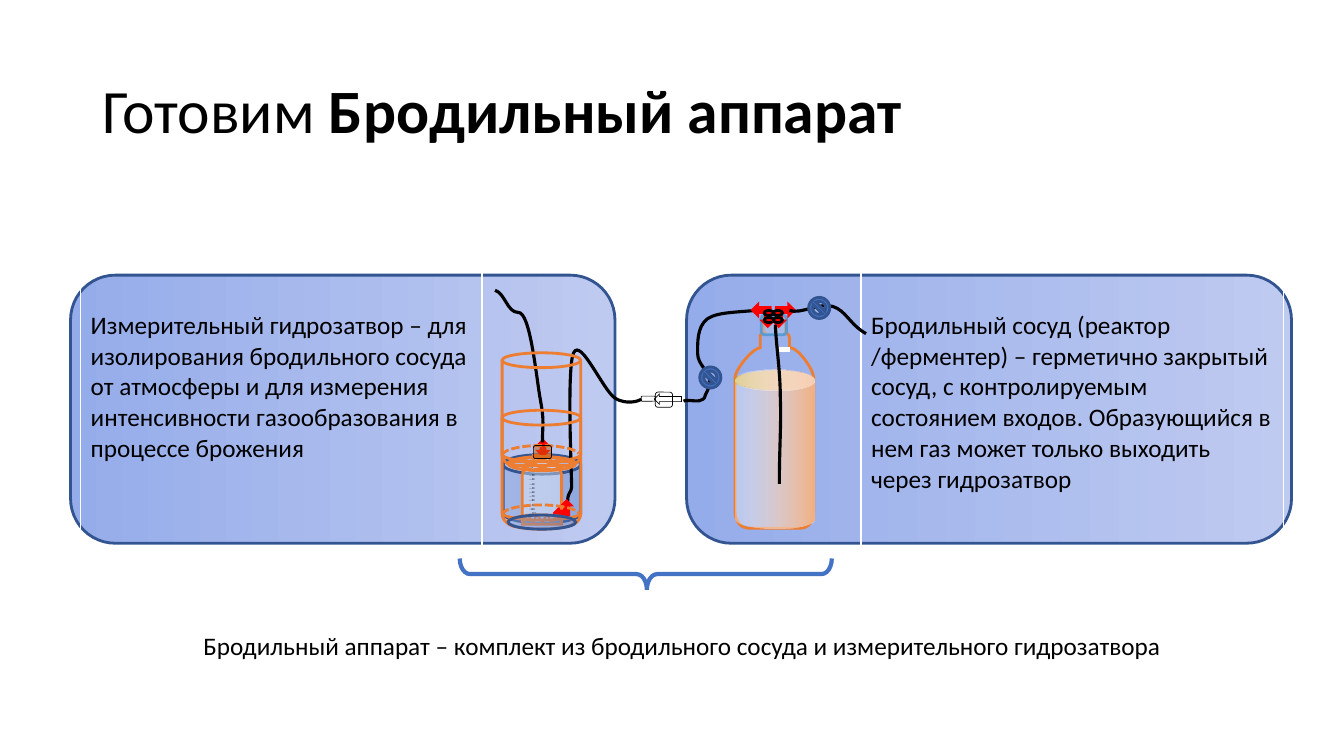
from dataclasses import dataclass

from lxml.etree import SubElement
from pptx import Presentation
from pptx.dml.color import RGBColor
from pptx.enum.dml import MSO_LINE
from pptx.enum.shapes import MSO_CONNECTOR, MSO_SHAPE
from pptx.enum.text import MSO_ANCHOR, PP_ALIGN
from pptx.oxml.ns import qn
from pptx.util import Inches, Pt


@dataclass(frozen=True)
class Theme:
    font: str = "Calibri"
    title: float = 44
    body: float = 18
    scale: float = 2
    fine: float = 1
    black: str = "000000"
    white: str = "FFFFFF"
    red: str = "FF0000"
    orange: str = "ED7D31"
    blue: str = "4472C4"
    navy: str = "325490"
    sky: str = "5B9BD5"
    surface: str = "BF9000"
    neck: tuple = (("B4C7E7", 51),)
    float_cap: tuple = (("C55A11", 51),)
    cup: tuple = (("FFFFFF", 37),)
    panel: tuple = (("95ACEA", 100), ("BFCAF0", 100))
    must: tuple = (("F6F8FC", 36), ("F4B183", 100))
    water: tuple = (("4A76C6", 40), ("84A2D9", 40))


T = Theme()


def set_alpha(color_parent, percent):
    if percent < 100:
        clr = color_parent.find(".//" + qn("a:srgbClr"))
        SubElement(clr, qn("a:alpha")).set("val", str(percent * 1000))


def draw_line(shape, color, width):
    shape.line.color.rgb = RGBColor.from_string(color)
    shape.line.width = Pt(width)
    ln = shape._element.spPr.find(qn("a:ln"))
    SubElement(ln, qn("a:miter")).set("lim", "800000")


def paint(sp, fill, line, width, angle=0):
    sp.shadow.inherit = False
    if fill is None:
        sp.fill.background()
    elif isinstance(fill, str):
        sp.fill.solid()
        sp.fill.fore_color.rgb = RGBColor.from_string(fill)
    elif len(fill) == 1:
        sp.fill.solid()
        sp.fill.fore_color.rgb = RGBColor.from_string(fill[0][0])
        set_alpha(sp._element.spPr.find(qn("a:solidFill")), fill[0][1])
    else:
        sp.fill.gradient()
        sp.fill.gradient_angle = angle
        stops = sp._element.spPr.findall(".//" + qn("a:gs"))
        for i, (stop, gs, (color, alpha)) in enumerate(zip(sp.fill.gradient_stops, stops, fill)):
            stop.color.rgb = RGBColor.from_string(color)
            stop.position = i
            set_alpha(gs, alpha)
    if line is None:
        sp.line.fill.background()
    else:
        draw_line(sp, line, width)


def add_preset(shapes, kind, box, fill=None, line=None, width=2, adj=(), rot=0, flip="", angle=0):
    sp = shapes.add_shape(kind, *map(Inches, box))
    for i, value in enumerate(adj):
        sp.adjustments[i] = value
    sp.rotation = rot
    xfrm = sp._element.spPr.find(qn("a:xfrm"))
    for axis in flip:
        xfrm.set("flip" + axis.upper(), "1")
    paint(sp, fill, line, width, angle)
    return sp


def add_line(shapes, start, end, color, width):
    cn = shapes.add_connector(MSO_CONNECTOR.STRAIGHT, *map(Inches, start + end))
    draw_line(cn, color, width)
    SubElement(cn._element.spPr, qn("a:effectLst"))


def add_outline(shapes, segments, line=T.black, width=2.25, fill=None, close=False):
    points = [seg[i:i + 2] for seg in segments for i in range(0, len(seg), 2)]
    emu = [(Inches(x), Inches(y)) for x, y in points]
    builder = shapes.build_freeform(*emu[0], scale=1.0)
    builder.add_line_segments(emu[1:], close=close)
    sp = builder.convert_to_shape()
    steps = iter(sp._element.spPr.findall(".//" + qn("a:lnTo")))
    for seg in segments[1:]:
        step = next(steps)
        if len(seg) == 6:
            bezier = step.makeelement(qn("a:cubicBezTo"), {})
            step.addprevious(bezier)
            for part in (step, next(steps), next(steps)):
                bezier.append(part[0])
                part.getparent().remove(part)
    paint(sp, fill, line, width)


def set_font(font, size, color=T.black):
    font.name = T.font
    font.size = Pt(size)
    font.color.rgb = RGBColor.from_string(color)


def add_title(slide):
    sp = slide.shapes.title
    sp.left, sp.top, sp.width, sp.height = map(Inches, (0.92, 0.4, 11.5, 1.45))
    tf = sp.text_frame
    tf.vertical_anchor = MSO_ANCHOR.MIDDLE
    p = tf.paragraphs[0]
    p.alignment = PP_ALIGN.LEFT
    p.line_spacing = 0.9
    set_font(p.font, T.title)
    p.add_run().text = "Готовим "
    r = p.add_run()
    r.text = "Бродильный аппарат"
    r.font.bold = True


def border_cell(cell):
    tc_pr = cell._tc.get_or_add_tcPr()
    for i, side in enumerate(("lnL", "lnR", "lnT", "lnB")):
        ln = tc_pr.makeelement(qn("a:" + side), {"w": str(Pt(0.96))})
        fill = SubElement(ln, qn("a:solidFill"))
        SubElement(fill, qn("a:srgbClr")).set("val", T.white)
        tc_pr.insert(i, ln)


def add_text_table(slide):
    table = slide.shapes.add_table(3, 3, *map(Inches, (0.8, 1.97, 11.93, 5.22))).table
    table.first_row = table.horz_banding = False
    for col, width in zip(table.columns, (3.98, 3.76, 4.19)):
        col.width = Inches(width)
    for row, height in zip(table.rows, (0.5, 3.48, 1.24)):
        row.height = Inches(height)
    for cell in table.iter_cells():
        cell.fill.background()
        border_cell(cell)
    for row in (0, 2):
        table.cell(row, 0).merge(table.cell(row, 2))
    entries = (
        (1, 0, 0.61, PP_ALIGN.LEFT, "Измерительный гидрозатвор – для изолирования бродильного сосуда от атмосферы и для измерения интенсивности газообразования в процессе брожения"),
        (1, 2, 0.61, PP_ALIGN.LEFT, "Бродильный сосуд (реактор /ферментер) – герметично закрытый сосуд, с контролируемым состоянием входов. Образующийся в нем газ может только выходить через гидрозатвор"),
        (2, 0, 0.31, PP_ALIGN.CENTER, "Бродильный аппарат – комплект из бродильного сосуда и измерительного гидрозатвора"),
    )
    for row, col, margin, align, text in entries:
        cell = table.cell(row, col)
        cell.margin_top = Inches(margin)
        p = cell.text_frame.paragraphs[0]
        p.text = text
        p.alignment = align
        set_font(p.font, T.body)


def add_vessel(shapes):
    add_outline(shapes, [(7.58, 3.07), (7.34, 3.1, 7.13, 3.09, 7.02, 3.16), (6.91, 3.24, 6.92, 3.41, 6.92, 3.51), (6.92, 3.61, 7.03, 3.69, 7.04, 3.75), (7.05, 3.82, 7.02, 3.87, 7, 3.91), (6.99, 3.94, 6.99, 3.96, 6.95, 3.97), (6.92, 3.99, 6.81, 3.96, 6.78, 3.98)])
    add_preset(shapes, MSO_SHAPE.NO_SYMBOL, (6.94, 3.64, 0.21, 0.21), T.blue, T.navy, adj=[0.188])
    add_outline(shapes, [(7.6, 3.13), (7.76, 3.13), (7.78, 3.13, 7.79, 3.14, 7.79, 3.16), (7.79, 3.28), (7.79, 3.29, 7.79, 3.3, 7.79, 3.3), (7.78, 3.3), (7.81, 3.31), (7.82, 3.32, 7.83, 3.33, 7.83, 3.35), (7.83, 3.45), (7.84, 3.45), (7.91, 3.45, 8.07, 3.66, 8.07, 3.75), (8.07, 5.08), (8.07, 5.17, 8.02, 5.24, 7.94, 5.24), (7.42, 5.24), (7.35, 5.24, 7.29, 5.17, 7.29, 5.08), (7.29, 3.75), (7.29, 3.67, 7.43, 3.5, 7.51, 3.46), (7.54, 3.45), (7.54, 3.35), (7.54, 3.33, 7.54, 3.32, 7.55, 3.31), (7.58, 3.3), (7.58, 3.3), (7.57, 3.3, 7.57, 3.29, 7.57, 3.28), (7.57, 3.16), (7.57, 3.14, 7.58, 3.13, 7.6, 3.13)], T.orange, 2, close=True)
    add_line(shapes, (7.73, 3.47), (7.84, 3.47), T.white, 3.25)
    add_preset(shapes, MSO_SHAPE.OVAL, (7.28, 3.68, 0.79, 0.19), T.surface)
    add_preset(shapes, MSO_SHAPE.OVAL, (7.29, 3.67, 0.78, 0.19), T.must)
    add_preset(shapes, MSO_SHAPE.CAN, (7.29, 3.68, 0.79, 1.56), T.must, adj=[0.244])
    add_preset(shapes, MSO_SHAPE.ROUNDED_RECTANGLE, (7.55, 3.13, 0.25, 0.19), T.neck, T.sky)
    for arrow_x, rot, flip, ring_x in ((7.46, 270, "", 7.58), (7.67, 90, "h", 7.67)):
        add_preset(shapes, MSO_SHAPE.LEFT_UP_ARROW, (arrow_x, 3.03, 0.21, 0.2), T.red, T.red, adj=[0.25] * 3, rot=rot, flip=flip)
        for y in (3.08, 3.15):
            add_preset(shapes, MSO_SHAPE.OVAL, (ring_x, y, 0.09, 0.05), line=T.black, flip=flip + "v")
    add_outline(shapes, [(8.59, 3.31), (8.43, 3.22, 8.39, 3.08, 8.26, 3.04), (8.13, 3, 7.94, 3.12, 7.83, 3.08)])
    add_preset(shapes, MSO_SHAPE.NO_SYMBOL, (8.02, 2.95, 0.21, 0.21), T.blue, T.navy, adj=[0.188])


def add_check_valve(shapes):
    for box in ((6.5, 3.89, 0.17, 0.15), (6.36, 3.93, 0.14, 0.05)):
        add_preset(shapes, MSO_SHAPE.ROUNDED_RECTANGLE, box, line=T.black, width=0.5)
    add_preset(shapes, MSO_SHAPE.LEFT_ARROW, (6.49, 3.91, 0.27, 0.1), line=T.black, width=0.5)


def add_scale(shapes):
    tf = shapes.add_textbox(*map(Inches, (5.15, 4.56, 0.28, 0.6))).text_frame
    tf.word_wrap = True
    for value in range(0, 120, 10):
        p = tf.paragraphs[0] if value == 0 else tf.add_paragraph()
        p.line_spacing = Pt(3)
        set_font(p.font, T.scale)
        if value == 100:
            r = p.add_run()
            r.text = "---"
            r.font.size = Pt(T.fine)
            p.add_run().text = "100"
        else:
            p.add_run().text = f"---{value}"


def add_jar(shapes, top, height, base):
    for x, flip, end in ((4.98, "v", 155.14), (5.47, "hv", 149.55)):
        add_preset(shapes, MSO_SHAPE.ARC, (x, base - 0.04, 0.29, 0.25), line=T.orange, adj=[107.56, end], flip=flip)
    arc = add_preset(shapes, MSO_SHAPE.ARC, (4.98, base, 0.77, 0.2), line=T.orange, adj=[108.51, 214.06])
    arc.line.dash_style = MSO_LINE.SQUARE_DOT
    add_preset(shapes, MSO_SHAPE.CAN, (4.98, top, 0.78, height), line=T.orange, adj=[0.189])


def add_water_seal(shapes):
    add_preset(shapes, MSO_SHAPE.CAN, (4.99, 4.51, 0.77, 0.68), T.water, T.navy, adj=[0.285], angle=180)
    add_outline(shapes, [(5.29, 4.52), (5.46, 4.52), (5.46, 4.56), (5.45, 4.57), (5.49, 4.59), (5.52, 4.62, 5.57, 4.68, 5.57, 4.71), (5.57, 5.2), (5.18, 5.2), (5.18, 4.71), (5.18, 4.68, 5.23, 4.62, 5.28, 4.59), (5.3, 4.58), (5.3, 4.57), (5.29, 4.57, 5.29, 4.56, 5.29, 4.56)], T.orange, 2, T.cup, True)
    for i in range(4):
        left = 5.19 + 0.097 * i
        for foot in (left, left + 0.09):
            add_line(shapes, (foot, 5.18), (left + 0.04, 5.1), T.orange, 1.5)
    add_outline(shapes, [(5.63, 4.99), (5.63, 4.87, 5.66, 4.91, 5.67, 4.83), (5.67, 4.72, 5.62, 3.64, 5.69, 3.5), (5.76, 3.35, 5.98, 3.87, 6.1, 3.95), (6.21, 4.02, 6.34, 3.98, 6.36, 3.96)])
    add_preset(shapes, MSO_SHAPE.LEFT_UP_ARROW, (5.5, 4.97, 0.16, 0.16), T.red, T.red, adj=[0.25] * 3)
    add_scale(shapes)
    add_preset(shapes, MSO_SHAPE.LEFT_RIGHT_ARROW, (5.32, 4.42, 0.13, 0.05), T.red, T.red, 3, rot=270)
    add_outline(shapes, [(5.38, 4.39), (5.38, 4.21, 5.4, 4.18, 5.36, 3.97), (5.32, 3.75, 5.26, 3.09, 5.14, 3.1), (5.03, 3.1, 5.01, 2.91, 4.91, 2.88)])
    add_preset(shapes, MSO_SHAPE.OVAL, (5.04, 4.53, 0.67, 0.14), line=T.orange)
    for y, lefts in ((4.54, (5.18, 5.37)), (4.58, (5.06, 5.28, 5.5)), (4.62, (5.19, 5.38))):
        for x in lefts:
            add_preset(shapes, MSO_SHAPE.OVAL, (x, y, 0.19, 0.04), line=T.orange)
    add_jar(shapes, 3.5, 1.08, 4.42)
    add_preset(shapes, MSO_SHAPE.OVAL, (5.03, 5.11, 0.67, 0.14), line=T.orange)
    add_jar(shapes, 4.07, 1.09, 5.01)
    add_preset(shapes, MSO_SHAPE.OVAL, (5.04, 5.11, 0.67, 0.14), T.water, T.navy, angle=180)
    add_preset(shapes, MSO_SHAPE.ROUNDED_RECTANGLE, (5.29, 4.42, 0.18, 0.13), T.float_cap, T.black, 0.5)


def add_dip_tube(shapes):
    add_outline(shapes, [(7.73, 4.8), (7.73, 4.44, 7.75, 4.21, 7.74, 3.95), (7.74, 3.68, 7.7, 3.45, 7.69, 3.22)])


def main():
    prs = Presentation()
    prs.slide_width, prs.slide_height = Inches(13.33), Inches(7.5)
    slide = prs.slides.add_slide(prs.slide_layouts[5])
    add_title(slide)
    for x, width in ((6.81, 6), (0.7, 5.4)):
        add_preset(slide.shapes, MSO_SHAPE.ROUNDED_RECTANGLE, (x, 2.73, width, 2.66), T.panel, T.navy)
    add_text_table(slide)
    add_preset(slide.shapes, MSO_SHAPE.LEFT_BRACE, (6.25, 3.85, 0.31, 3.69), line=T.blue, width=3, adj=[0.329, 0.503], rot=270)
    apparatus = slide.shapes.add_group_shape().shapes
    for draw in (add_vessel, add_check_valve, add_water_seal, add_dip_tube):
        draw(apparatus)
    prs.save("out.pptx")


if __name__ == "__main__":
    main()
